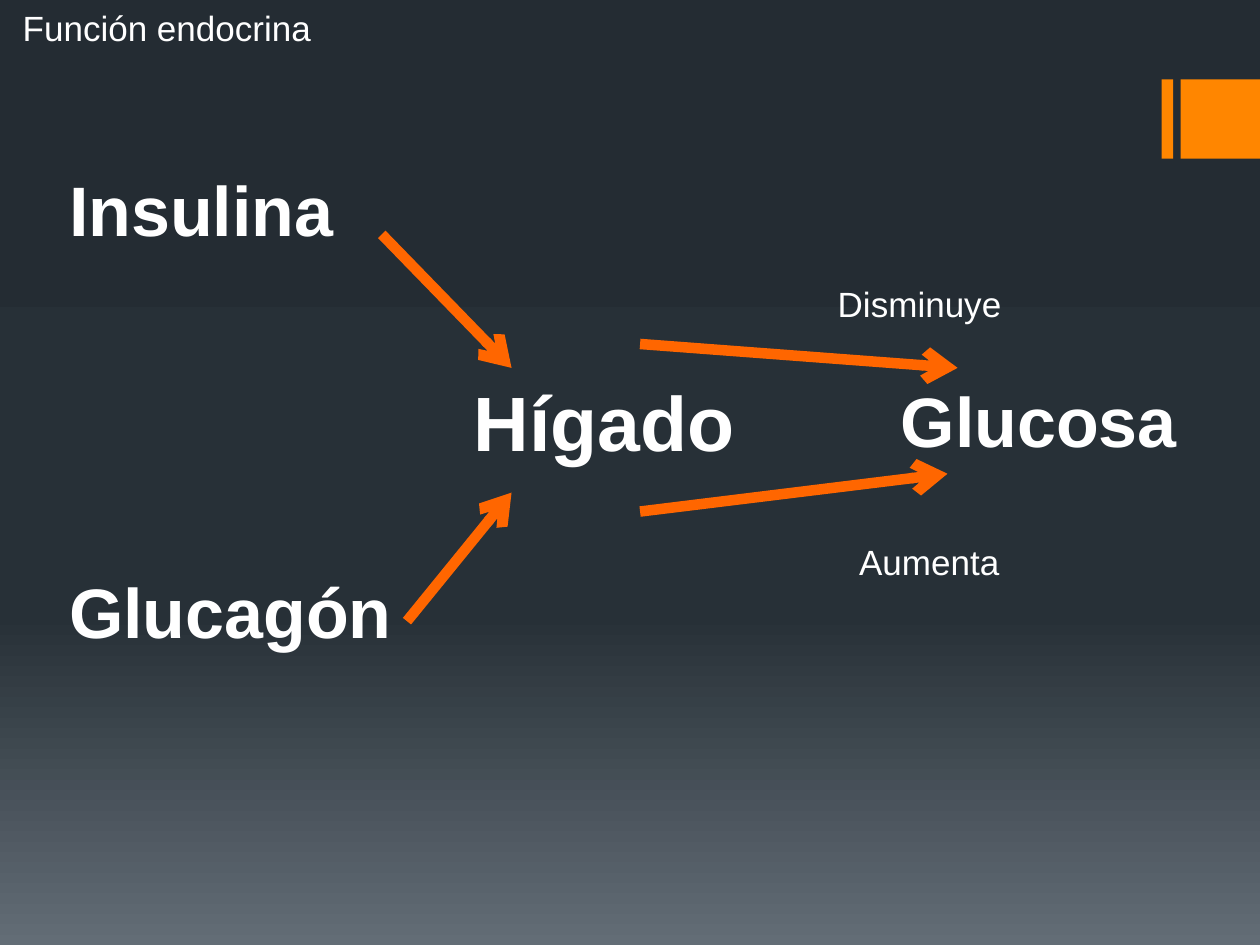
from copy import deepcopy

from pptx import Presentation
from pptx.dml.color import RGBColor
from pptx.enum.shapes import MSO_CONNECTOR as Connector, MSO_SHAPE as Shape
from pptx.enum.text import MSO_AUTO_SIZE as AutoSize
from pptx.oxml.ns import qn
from pptx.util import Inches, Pt
from lxml import etree

WHITE, ACCENT, ARROW = "FFFFFF", "FF8600", "FF6600"
FONT = "Arial"


def color(hex_code):
    return RGBColor.from_string(hex_code)


def format_text(paragraph, size, bold=False):
    for run in paragraph.runs:
        run.font.name = FONT
        run.font.size = Pt(size)
        run.font.bold = bold
        run.font.color.rgb = color(WHITE)


def paint_background(slide):
    fill = slide.background.fill
    fill.gradient()
    fill.gradient_angle = 270
    # The default gradient has two stops; a third goes at the end
    last_stop = fill.gradient_stops[1]._gs
    last_stop.addnext(deepcopy(last_stop))
    stops = [(0, "242C33"), (0.65, "273037"), (1, "636D76")]
    for stop, (position, hex_code) in zip(fill.gradient_stops, stops):
        stop.position = position
        stop.color.rgb = color(hex_code)


def add_corner_mark(slide, left, top, width, height):
    """A thin bar and a square that ends at the right edge of the box."""
    bar_width = 0.09
    square_left = left + width - height
    for x, part_width in [(left, bar_width), (square_left, height)]:
        block = slide.shapes.add_shape(
            Shape.RECTANGLE, Inches(x), Inches(top), Inches(part_width), Inches(height))
        block.shadow.inherit = False
        block.fill.solid()
        block.fill.fore_color.rgb = color(ACCENT)
        block.line.fill.background()


def place_heading(slide, text, left, top, width, height):
    heading = slide.placeholders[1]
    heading.left, heading.top = Inches(left), Inches(top)
    heading.width, heading.height = Inches(width), Inches(height)
    heading.text_frame.text = text
    paragraph = heading.text_frame.paragraphs[0]
    paragraph.space_before = Pt(4)
    format_text(paragraph, 20)
    # No bullet, small indent
    properties = paragraph._p.get_or_add_pPr()
    properties.set("marL", str(Inches(0.05)))
    properties.set("indent", "0")
    etree.SubElement(properties, qn("a:buNone"))


def add_label(slide, text, left, top, width, height, size, bold, wrap=False):
    label = slide.shapes.add_textbox(
        Inches(left), Inches(top), Inches(width), Inches(height))
    frame = label.text_frame
    frame.word_wrap = wrap
    frame.auto_size = AutoSize.SHAPE_TO_FIT_TEXT
    frame.text = text
    format_text(frame.paragraphs[0], size, bold)


def add_arrow(slide, start, end):
    arrow = slide.shapes.add_connector(
        Connector.STRAIGHT, *[Inches(value) for value in (*start, *end)])
    arrow.line.color.rgb = color(ARROW)
    arrow.line.width = Pt(6)
    etree.SubElement(arrow.line._get_or_add_ln(), qn("a:tailEnd"), type="arrow")
    etree.SubElement(arrow._element.spPr, qn("a:effectLst"))


def add_hormone_diagram(slide, left, top):
    """Hormones act on the liver, which changes glucose; offsets from left, top."""
    # Hormones, organ and glucose
    terms = [
        ("Insulina", 0, 0, 2.58, 0.77, 40, True),
        ("Glucagón", 0, 3.19, 2.79, 0.77, 40, False),
        ("Hígado", 3.21, 1.65, 2.47, 0.84, 44, False),
        ("Glucosa", 6.6, 1.68, 2.41, 0.77, 40, False),
    ]
    for text, x, y, width, height, size, wrap in terms:
        add_label(slide, text, left + x, top + y, width, height, size, True, wrap)

    # Hormones to liver, then liver to glucose
    arrows = [
        ((2.58, 0.59), (3.61, 1.65)),
        ((2.78, 3.66), (3.61, 2.64)),
        ((4.63, 1.46), (7.15, 1.65)),
        ((4.63, 2.79), (7.07, 2.49)),
    ]
    for start, end in arrows:
        add_arrow(slide, *[(left + x, top + y) for x, y in (start, end)])

    # Effects on glucose
    for text, x, y, width in [("Disminuye", 6.1, 0.92, 1.51), ("Aumenta", 6.27, 2.97, 1.32)]:
        add_label(slide, text, left + x, top + y, width, 0.44, 20, False)


def main():
    deck = Presentation()
    deck.slide_width, deck.slide_height = Inches(10), Inches(7.5)
    slide = deck.slides.add_slide(deck.slide_layouts[1])
    unused_title = slide.shapes.title._element
    unused_title.getparent().remove(unused_title)

    paint_background(slide)
    add_corner_mark(slide, 9.22, 0.63, 0.78, 0.63)
    place_heading(slide, "Función endocrina", 0.03, 0, 9.06, 7.5)
    add_hormone_diagram(slide, 0.45, 1.27)
    deck.save("out.pptx")


if __name__ == "__main__":
    main()
